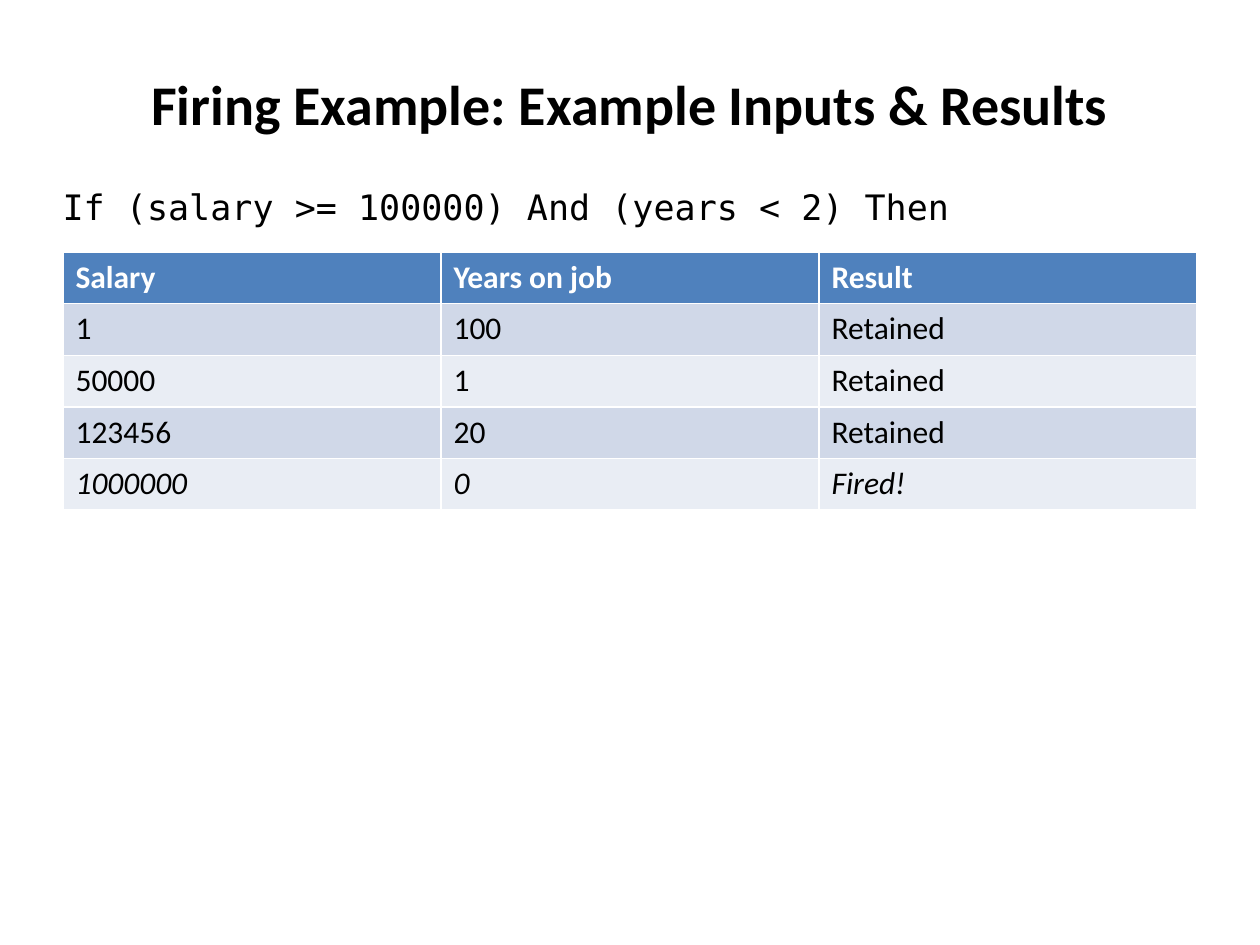
from typing import NamedTuple

from pptx import Presentation
from pptx.dml.color import RGBColor
from pptx.enum.text import MSO_ANCHOR, PP_ALIGN
from pptx.util import Inches, Pt

CENTER = PP_ALIGN.CENTER
MIDDLE = MSO_ANCHOR.MIDDLE

BLACK = RGBColor(0x00, 0x00, 0x00)
WHITE = RGBColor(0xFF, 0xFF, 0xFF)
BLUE = RGBColor(0x4F, 0x81, 0xBD)
BANDS = (RGBColor(0xD0, 0xD8, 0xE8), RGBColor(0xE9, 0xED, 0xF4))

SANS = "Calibri"
MONO = "DejaVu Sans Mono"
TITLE_ONLY = 5

WIDTH = Inches(10)
HEIGHT = Inches(7.5)
MARGIN = round(WIDTH * 0.05)
INNER = WIDTH - 2 * MARGIN
ROW = Inches(0.41)


class Style(NamedTuple):
    size: int
    font: str = SANS
    color: RGBColor = BLACK
    bold: bool = False
    italic: bool = False


class Row(NamedTuple):
    cells: tuple[str, ...]
    fill: RGBColor
    style: Style


HEAD = Style(18, color=WHITE, bold=True)
PLAIN = Style(18)
FIRED = Style(18, italic=True)

ROWS = (
    Row(("Salary", "Years on job", "Result"), BLUE, HEAD),
    Row(("1", "100", "Retained"), BANDS[0], PLAIN),
    Row(("50000", "1", "Retained"), BANDS[1], PLAIN),
    Row(("123456", "20", "Retained"), BANDS[0], PLAIN),
    Row(("1000000", "0", "Fired!"), BANDS[1], FIRED),
)


def write(frame, text: str, style: Style) -> None:
    frame.text = text
    for run in frame.paragraphs[0].runs:
        font = run.font
        font.name, font.size = style.font, Pt(style.size)
        font.bold, font.italic = style.bold, style.italic
        font.color.rgb = style.color


def add_title(slide, text: str) -> None:
    title = slide.shapes.title
    title.left, title.top = MARGIN, Inches(0.3)
    title.width, title.height = INNER, Inches(1.03)
    write(title.text_frame, text, Style(32, bold=True))
    title.text_frame.vertical_anchor = MIDDLE
    title.text_frame.paragraphs[0].alignment = CENTER


def add_code(slide, text: str) -> None:
    box = slide.shapes.add_textbox(Inches(0.33), Inches(1.42), INNER, Inches(0.44))
    frame = box.text_frame
    frame.word_wrap = True
    frame.margin_left = 0
    write(frame, text, Style(20, MONO))


def add_grid(slide, rows: tuple[Row, ...]) -> None:
    """Add the table; its default style supplies the white borders."""
    shape = slide.shapes.add_table(
        len(rows), len(rows[0].cells), MARGIN, Inches(2), INNER, ROW * len(rows)
    )
    for line, row in zip(shape.table.rows, rows):
        for cell, text in zip(line.cells, row.cells):
            cell.fill.solid()
            cell.fill.fore_color.rgb = row.fill
            write(cell.text_frame, text, row.style)


def main() -> None:
    deck = Presentation()
    deck.slide_width, deck.slide_height = WIDTH, HEIGHT
    slide = deck.slides.add_slide(deck.slide_layouts[TITLE_ONLY])
    add_title(slide, "Firing Example: Example Inputs & Results")
    add_grid(slide, ROWS)
    add_code(slide, " If (salary >= 100000) And (years < 2) Then")
    deck.save("out.pptx")


if __name__ == "__main__":
    main()
